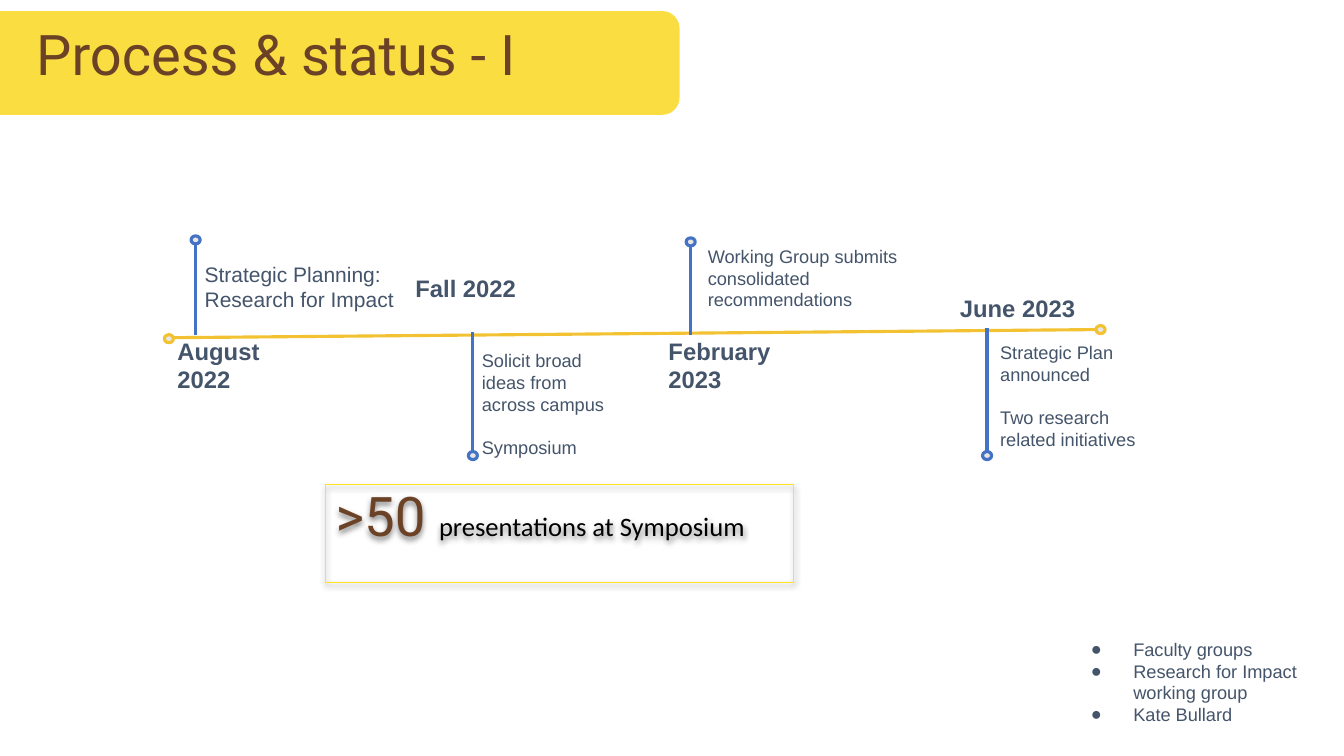
from lxml.etree import SubElement
from pptx import Presentation
from pptx.dml.color import RGBColor
from pptx.enum.shapes import MSO_CONNECTOR, MSO_SHAPE
from pptx.enum.text import MSO_ANCHOR
from pptx.oxml.ns import qn
from pptx.util import Inches, Pt

BLUE, GOLD, SLATE, BROWN = "4472C4", "F2C232", "44546A", "6C4226"
DOT_W, DOT_H = 0.09, 0.08

TITLE = {"size": Pt(40), "name": "Roboto"}
COUNT = {"size": Pt(39), "name": "Roboto"}
CLAIM = {"size": Pt(19), "name": "Calibri"}
DATE = {"size": Pt(17), "name": "Arial", "bold": True}
LEAD = {"size": Pt(15), "name": "Arial"}
NOTE = {"size": Pt(13), "name": "Arial"}

STEMS = [
    (4.69, 3.29, 4.48, 4.48),
    (6.85, 2.43, 3.32, 2.36),
    (9.79, 3.25, 4.52, 4.48),
    (1.94, 2.41, 3.32, 2.34),
]
ENDS = [(1.63, 3.32), (10.87, 3.23)]
LABELS = [
    ((1.63, 3.21, 1.53, 0.77), ["August", "2022"], DATE, 0),
    ((6.5, 3.21, 1.49, 0.47), ["February 2023"], DATE, 0),
    ((3.99, 2.59, 1.53, 0.47), ["Fall 2022"], DATE, 0),
    ((9.39, 2.78, 1.49, 0.47), ["June 2023"], DATE, 0),
    ((4.65, 3.34, 1.66, 1.32),
     ["Solicit broad ideas from across campus", "Symposium"], NOTE, 15),
    ((6.89, 2.3, 2.16, 1.79),
     ["Working Group submits consolidated recommendations"], NOTE, 0),
    ((9.79, 3.26, 1.87, 1.16),
     ["Strategic Plan announced", "Two research related initiatives"], NOTE, 15),
    ((1.9, 2.46, 2.16, 0.77),
     ["Strategic Planning:", "Research for Impact"], LEAD, 0),
]
TEAM = ["Faculty groups", "Research for Impact working group", "Kate Bullard"]


def color(code):
    return RGBColor.from_string(code)


def style(item, values):
    for key, value in values.items():
        setattr(item, key, value)


def add_run(para, text, form, code):
    run = para.add_run()
    run.text = text
    style(run.font, form)
    run.font.color.rgb = color(code)


def add_shape(slide, kind, box, fill=None, edge=None, width=2.25):
    shape = slide.shapes.add_shape(kind, *map(Inches, box))
    shape.shadow.inherit = False
    if fill:
        shape.fill.solid()
        shape.fill.fore_color.rgb = color(fill)
    else:
        shape.fill.background()
    if edge:
        shape.line.color.rgb = color(edge)
        shape.line.width = Pt(width)
    else:
        shape.line.fill.background()
    return shape


def add_dot(slide, left, top, edge):
    add_shape(slide, MSO_SHAPE.OVAL, (left, top, DOT_W, DOT_H), "E7E6E6", edge)


def add_line(slide, ends, code):
    line = slide.shapes.add_connector(MSO_CONNECTOR.STRAIGHT, *map(Inches, ends))
    line.line.color.rgb = color(code)
    line.line.width = Pt(2.25)
    SubElement(line._element.spPr, qn("a:effectLst"))


def add_text(slide, box, lines, form, gap=0, code=SLATE):
    frame = slide.shapes.add_textbox(*map(Inches, box)).text_frame
    pad = Inches(0.13)
    style(frame, {"word_wrap": True, "margin_left": pad, "margin_right": pad,
                  "margin_top": pad, "margin_bottom": pad})
    for i, text in enumerate(lines):
        para = frame.paragraphs[0] if i == 0 else frame.add_paragraph()
        if i and gap:
            para.space_before = Pt(gap)
        add_run(para, text, form, code)
    return frame


def add_list(slide, box, lines):
    for para in add_text(slide, box, lines, NOTE).paragraphs:
        props = para._p.get_or_add_pPr()
        props.set("marL", str(Inches(0.67)))
        props.set("indent", str(Inches(-0.42)))
        tint = SubElement(props, qn("a:buClr"))
        SubElement(tint, qn("a:srgbClr"), val=SLATE)
        SubElement(props, qn("a:buFont"), typeface="Arial")
        SubElement(props, qn("a:buChar"), char="●")


def add_shadow(shape):
    effects = shape._element.spPr.find(qn("a:effectLst"))
    outer = SubElement(effects, qn("a:outerShdw"), blurRad=str(Pt(4.5)),
                       dist=str(Pt(1.5)), dir="5400000", rotWithShape="0")
    tint = SubElement(outer, qn("a:srgbClr"), val="000000")
    SubElement(tint, qn("a:alpha"), val="50000")


def add_claim(slide):
    box = add_shape(slide, MSO_SHAPE.RECTANGLE, (3.23, 4.81, 4.64, 0.97),
                    edge="FDE320", width=0.75)
    add_shadow(box)
    frame = box.text_frame
    style(frame, {"word_wrap": True, "vertical_anchor": MSO_ANCHOR.TOP})
    para = frame.paragraphs[0]
    style(para, {"alignment": 1, "line_spacing": 0.9, "space_before": Pt(10)})
    add_run(para, ">50 ", COUNT, BROWN)
    add_run(para, "presentations at Symposium", CLAIM, "000000")


def main():
    deck = Presentation()
    style(deck, {"slide_width": Inches(13.33), "slide_height": Inches(7.5)})
    slide = deck.slides.add_slide(deck.slide_layouts[6])
    add_claim(slide)
    add_shape(slide, MSO_SHAPE.ROUNDED_RECTANGLE, (-0.18, 0.11, 6.92, 1.03), "FADE41")
    add_text(slide, (0.23, 0.06, 6.74, 1.03), ["Process & status - I"], TITLE, code=BROWN)
    add_line(slide, (1.72, 3.35, 10.87, 3.27), GOLD)
    for x, top, base, dot in STEMS:
        add_line(slide, (x, top, x, base), BLUE)
        add_dot(slide, x - DOT_W / 2, dot, BLUE)
    for left, top in ENDS:
        add_dot(slide, left, top, GOLD)
    for box, lines, form, gap in LABELS:
        add_text(slide, box, lines, form, gap)
    add_list(slide, (10.44, 6.2, 2.62, 1.03), TEAM)
    deck.save("out.pptx")


if __name__ == "__main__":
    main()
